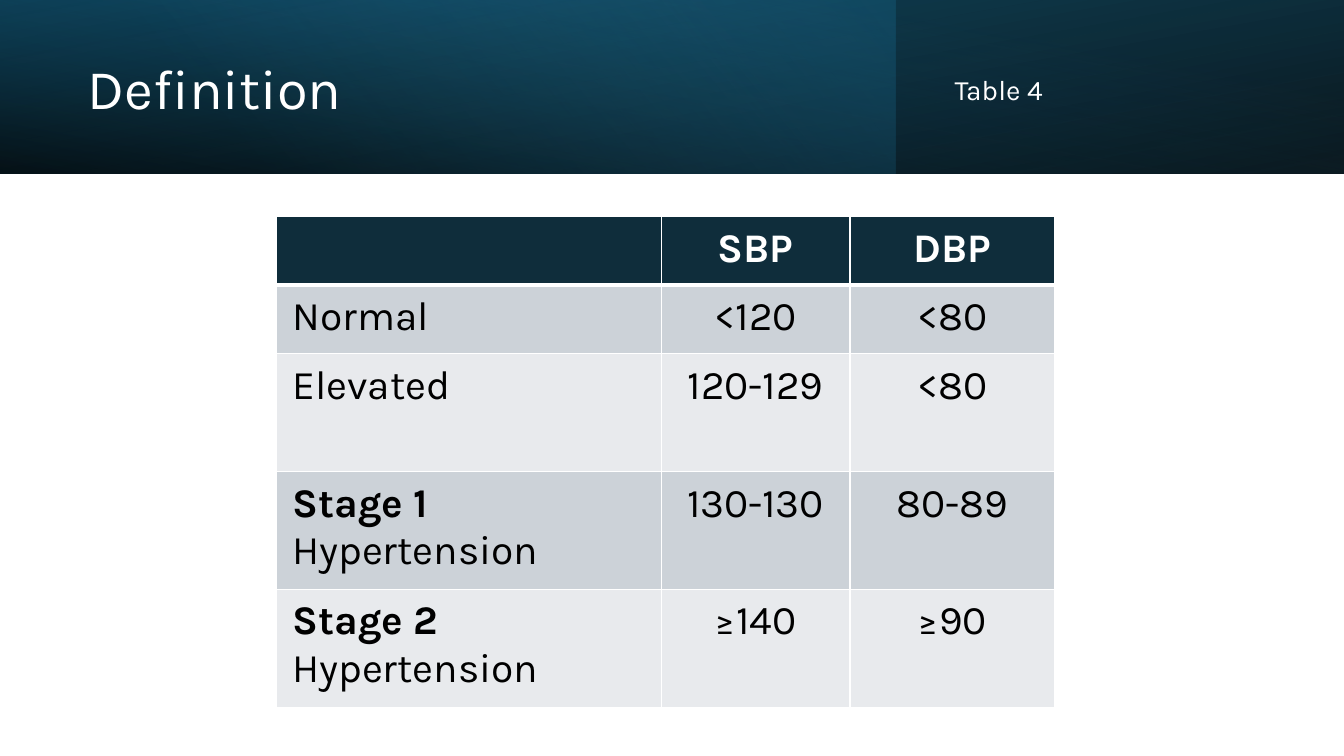
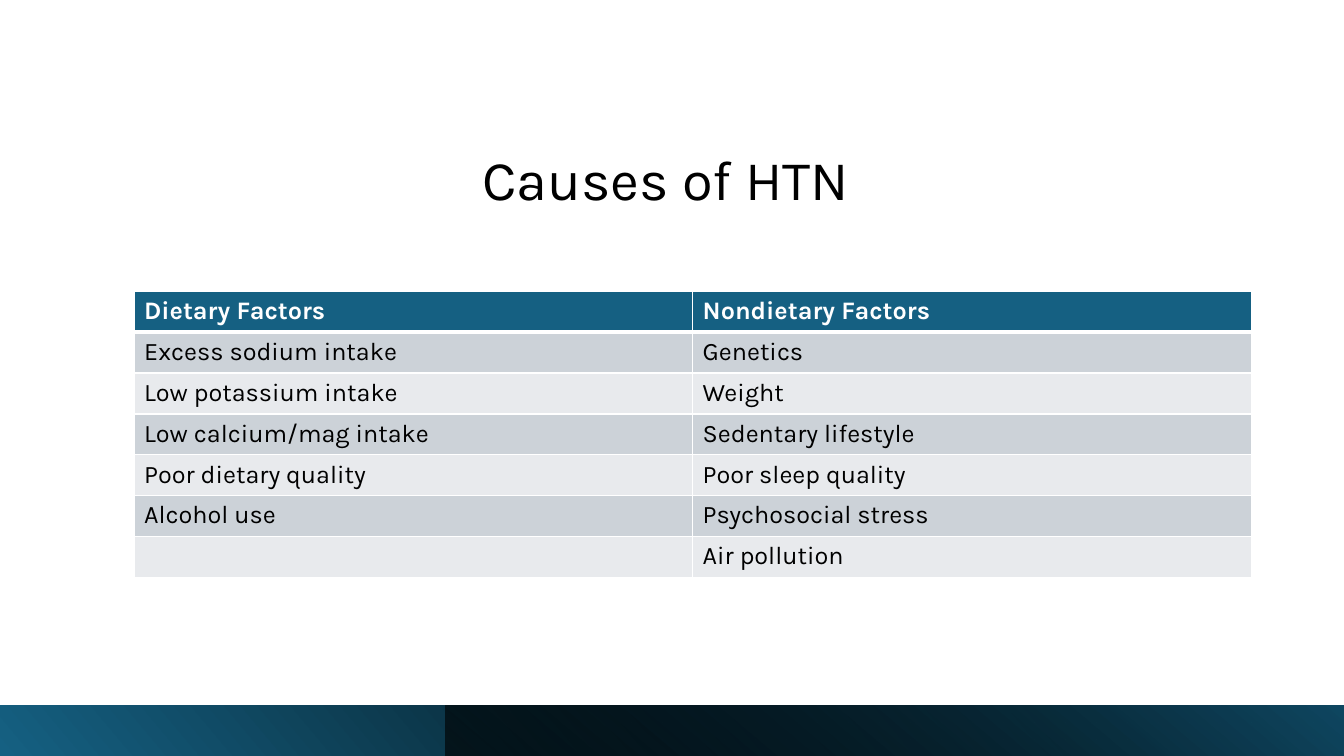
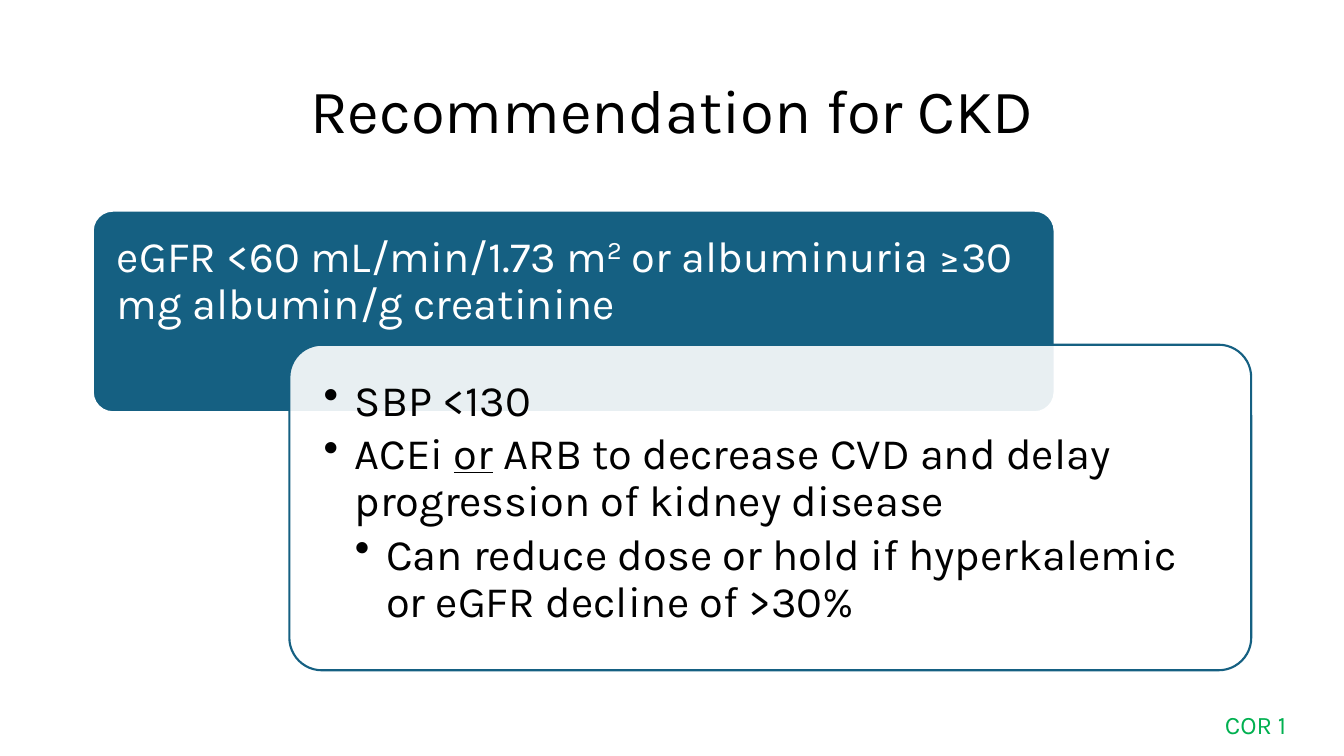
from pptx import Presentation
from pptx import oxml
from pptx import util as u
from pptx.dml import color
from pptx.enum import shapes, text
from pptx.oxml import ns

FONT = "Karla"
WHITE, BLACK, GREEN = "FFFFFF", "000000", "00B050"
TEAL, DEEP, SKY, NAVY = "156082", "104862", "46B1E1", "0F2D3B"
STRIPES = ("CCD2D8", "E8EAED")
LEFT, CENTER = text.PP_ALIGN.LEFT, text.PP_ALIGN.CENTER
TOP, MIDDLE, BOTTOM = (text.MSO_ANCHOR.TOP, text.MSO_ANCHOR.MIDDLE,
                       text.MSO_ANCHOR.BOTTOM)
SLIDE_WIDTH, SLIDE_HEIGHT = 13.33, 7.5


def rgb(value):
    return color.RGBColor.from_string(value)


def lengths(values):
    return [u.Inches(value) for value in values]


def set_all(target, values):
    for name, value in values.items():
        setattr(target, name, value)


def set_margins(target, values):
    sides = ("margin_left", "margin_top", "margin_right", "margin_bottom")
    set_all(target, dict(zip(sides, lengths(values))))


def add_run(paragraph, words, size, hue, baseline=None, **font):
    run = paragraph.add_run()
    run.text = words
    set_all(run.font, {"name": FONT, "size": u.Pt(size), **font})
    run.font.color.rgb = rgb(hue)
    if baseline:
        run._r.get_or_add_rPr().set("baseline", str(baseline))


def write(paragraph, runs, size, hue, **layout):
    set_all(paragraph, layout)
    for words, font in runs:
        add_run(paragraph, words, size, hue, **font)


def format_frame(frame, anchor=TOP, margins=(0.1, 0.05, 0.1, 0.05)):
    set_all(frame, {"word_wrap": True, "vertical_anchor": anchor,
                    "auto_size": text.MSO_AUTO_SIZE.NONE})
    set_margins(frame, margins)


def add_text(slide, box, **frame_values):
    frame = slide.shapes.add_textbox(*lengths(box)).text_frame
    format_frame(frame, **frame_values)
    return frame


def place_title(slide, box, words, size=40, hue=BLACK, anchor=MIDDLE, align=CENTER):
    title = slide.shapes.title
    set_all(title, dict(zip(("left", "top", "width", "height"), lengths(box))))
    format_frame(title.text_frame, anchor)
    write(title.text_frame.paragraphs[0], [(words, {})], size, hue,
          alignment=align, line_spacing=0.9)
    title.element.getparent().append(title.element)


def add_panel(slide, kind, box):
    shape = slide.shapes.add_shape(kind, *lengths(box))
    shape.shadow.inherit = False
    return shape


def add_gradient(slide, box, stops, angle, flipped=False, rotation=0):
    shape = add_panel(slide, shapes.MSO_SHAPE.RECTANGLE, box)
    shape.line.fill.background()
    shape.fill.background()
    shape.rotation = rotation
    properties = shape.element.spPr
    if flipped:
        properties.find(ns.qn("a:xfrm")).set("flipH", "1")
    marks = "".join(
        f'<a:gs pos="{position * 1000}"><a:srgbClr val="{hue}">'
        f'<a:alpha val="{alpha * 1000}"/></a:srgbClr></a:gs>'
        for position, hue, alpha in stops)
    gradient = oxml.parse_xml(
        f'<a:gradFill {ns.nsdecls("a")} rotWithShape="1"><a:gsLst>{marks}</a:gsLst>'
        f'<a:lin ang="{angle * 60000}" scaled="0"/></a:gradFill>')
    properties.replace(properties.find(ns.qn("a:noFill")), gradient)


def header_band(slide, box):
    left, top, width, height = box
    add_gradient(slide, box, [(0, BLACK, 96), (100, DEEP, 100)], 100, True, 180)
    add_gradient(slide, (left, top, width * 2 / 3, height),
                 [(0, TEAL, 41), (74, SKY, 0)], 140)
    add_gradient(slide, box, [(0, BLACK, 63), (78, TEAL, 15)], 260, True)


def footer_band(slide, box):
    left, top, width, height = box
    offset = 4.42
    add_gradient(slide, box, [(0, TEAL, 100), (78, BLACK, 100)], 40, True, 180)
    add_gradient(slide, (left + offset, top, width - offset, height),
                 [(0, BLACK, 63), (100, DEEP, 100)], 230, True)


def set_borders(cell, row):
    widths = {"lnL": 1, "lnR": 1, "lnT": 3 if row == 1 else 1,
              "lnB": 3 if row == 0 else 1}
    properties = cell._tc.get_or_add_tcPr()
    for side, width in widths.items():
        properties.append(oxml.parse_xml(
            f'<a:{side} {ns.nsdecls("a")} w="{width * 12700}"><a:solidFill>'
            f'<a:srgbClr val="{WHITE}"/></a:solidFill></a:{side}>'))


def add_grid(slide, origin, columns, heights, rows, size, header_fill,
             value_align=LEFT, margins=(0.1, 0.05, 0.1, 0.05)):
    box = (*origin, sum(columns), sum(heights))
    table = slide.shapes.add_table(len(rows), len(columns), *lengths(box)).table
    for column, width in zip(table.columns, columns):
        column.width = u.Inches(width)
    for index, (row, height, contents) in enumerate(zip(table.rows, heights, rows)):
        row.height = u.Inches(height)
        header = index == 0
        for position, (cell, content) in enumerate(zip(row.cells, contents)):
            set_margins(cell, margins)
            set_borders(cell, index)
            cell.fill.solid()
            cell.fill.fore_color.rgb = rgb(
                header_fill if header else STRIPES[(index - 1) % 2])
            runs = [(content, {"bold": header})] if isinstance(content, str) else content
            if content:
                write(cell.text_frame.paragraphs[0], runs, size,
                      WHITE if header else BLACK,
                      alignment=value_align if position else LEFT)


def add_card(slide, box, fill, line, opacity=100):
    card = add_panel(slide, shapes.MSO_SHAPE.ROUNDED_RECTANGLE, box)
    card.adjustments[0] = 0.1
    card.fill.solid()
    card.fill.fore_color.rgb = rgb(fill)
    if opacity < 100:
        hue = card.element.spPr.find(ns.qn("a:solidFill"))[0]
        hue.append(oxml.parse_xml(
            f'<a:alpha {ns.nsdecls("a")} val="{opacity * 1000}"/>'))
    card.line.color.rgb = rgb(line)
    card.line.width = u.Pt(1.5)


def criteria_card(slide, box):
    left, top, width, height = box
    add_card(slide, box, TEAL, WHITE)
    frame = add_text(slide, (left, top, width, height * 2 / 3),
                     margins=(0.24, 0.24, 0.24, 0.13))
    runs = [("eGFR <60 mL/min/1.73 m", {}), ("2", {"baseline": 30000}),
            (" or albuminuria ≥30 mg albumin/g creatinine", {})]
    write(frame.paragraphs[0], runs, 31, WHITE, line_spacing=0.9)


def treatment_card(slide, box):
    left, top, width, height = box
    inset = 0.1
    add_card(slide, box, WHITE, TEAL, 90)
    frame = add_text(slide, (left + inset, top + inset,
                             width - 2 * inset, height - 2 * inset),
                     margins=(0.24,) * 4)
    bullets = [
        (1, [("SBP <130", {})]),
        (1, [("ACEi ", {}), ("or", {"underline": True}),
             (" ARB to decrease CVD and delay progression of kidney disease", {})]),
        (2, [("Can reduce dose or hold if hyperkalemic or eGFR decline of >30%", {})]),
    ]
    indent = u.Inches(0.31)
    for index, (level, runs) in enumerate(bullets):
        paragraph = frame.add_paragraph() if index else frame.paragraphs[0]
        properties = paragraph._p.get_or_add_pPr()
        properties.set("marL", str(level * indent))
        properties.set("indent", str(-indent))
        properties.append(oxml.parse_xml(f'<a:buChar {ns.nsdecls("a")} char="•"/>'))
        write(paragraph, runs, 31, BLACK, level=level, line_spacing=0.9,
              space_after=u.Pt(4.65))


def definition_slide(slide):
    header_band(slide, (0, 0, SLIDE_WIDTH, 1.72))
    place_title(slide, (0.77, 0.27, 7.72, 1.27), "Definition", hue=WHITE, align=LEFT)
    label = add_text(slide, (9.37, 0.43, 3.54, 0.96), anchor=MIDDLE)
    write(label.paragraphs[0], [("Table 4", {})], 20, WHITE, line_spacing=0.9)
    bold = {"bold": True}
    rows = [
        ("", "SBP", "DBP"),
        ("Normal", "<120", "<80"),
        ("Elevated", "120-129", "<80"),
        ([("Stage 1 ", bold), ("Hypertension", {})], "130-130", "80-89"),
        ([("Stage 2", bold), (" Hypertension", {})], "≥140", "≥90"),
    ]
    add_grid(slide, (2.74, 2.15), (3.82, 1.87, 2.03), [0.68] * 2 + [1.17] * 3,
             rows, 29, NAVY, CENTER, (0.16, 0.08, 0.16, 0.08))


def causes_slide(slide):
    place_title(slide, (3.96, 1.3, 5.42, 0.86), "Causes of HTN ", anchor=BOTTOM)
    rows = [
        ("Dietary Factors", "Nondietary Factors"),
        ("Excess sodium intake", "Genetics"),
        ("Low potassium intake", "Weight"),
        ("Low calcium/mag intake", "Sedentary lifestyle"),
        ("Poor dietary quality", "Poor sleep quality"),
        ("Alcohol use", "Psychosocial stress"),
        ("", "Air pollution"),
    ]
    add_grid(slide, (1.33, 2.89), (5.54, 5.54), [2.84 / len(rows)] * len(rows),
             rows, 18, TEAL)
    footer_band(slide, (0, SLIDE_HEIGHT - 0.5, SLIDE_WIDTH, 0.5))


def recommendation_slide(slide):
    place_title(slide, (0.92, 0.4, 11.5, 1.45), "Recommendation for CKD", size=44)
    criteria_card(slide, (0.92, 2.09, 9.54, 2))
    treatment_card(slide, (2.87, 3.42, 9.54, 3.23))
    grade = add_text(slide, (12.05, 6.99, 1, 0.4))
    write(grade.paragraphs[0], [("COR 1", {})], 18, GREEN)


def main():
    presentation = Presentation()
    presentation.slide_width = u.Inches(SLIDE_WIDTH)
    presentation.slide_height = u.Inches(SLIDE_HEIGHT)
    for build in (definition_slide, causes_slide, recommendation_slide):
        build(presentation.slides.add_slide(presentation.slide_layouts[5]))
    presentation.save("out.pptx")


if __name__ == "__main__":
    main()
